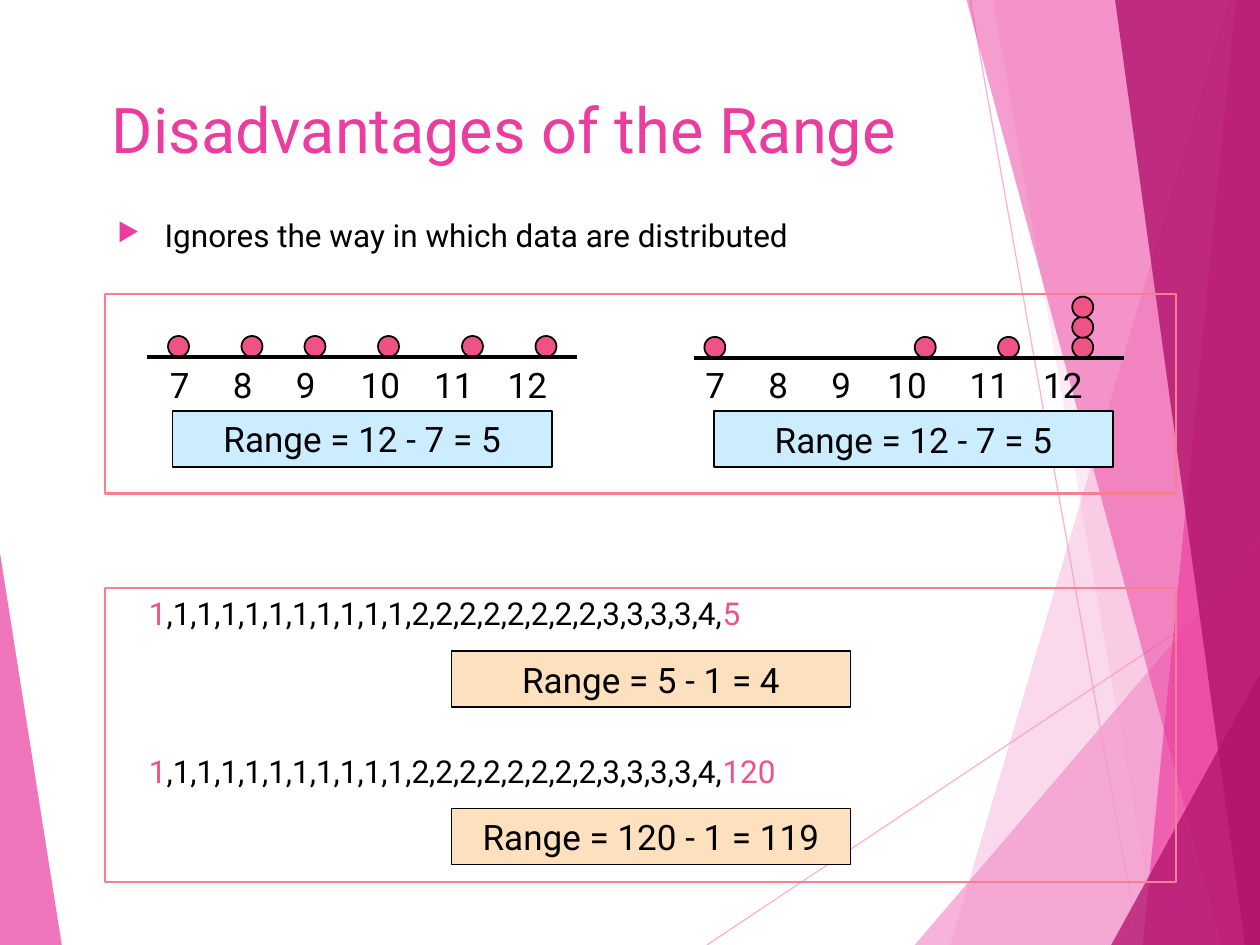
"""Build a slide on the disadvantages of the range."""
from lxml.etree import SubElement
from pptx import Presentation
from pptx.dml.color import RGBColor
from pptx.enum.shapes import MSO_CONNECTOR, MSO_SHAPE
from pptx.enum.text import MSO_ANCHOR, PP_ALIGN
from pptx.oxml.ns import qn
from pptx.util import Pt

FONT = "Roboto"
BLACK, PINK, LIGHT_PINK, DARK_PINK = "000000", "EB3D9F", "F496CB", "B2136D"
DOT_COLOR, FRAME_COLOR, BLUE, ORANGE = "EF5285", "F77F90", "CCECFF", "FDE0BD"
WIDTH, HEIGHT, DOT = 720, 540, 12

TITLE = "Disadvantages of the Range"
BULLET = "Ignores the way in which data are distributed"
RAYS = [((404, 540), (720, 329.5)), ((554.4, 0), (650.9, 540))]
FACETS = [
    (LIGHT_PINK, 36, [(702, 0), (543, 540), (720, 540), (720, 0)]),
    (LIGHT_PINK, 20, [(567.5, 0), (661.5, 540), (720, 540), (720, 0)]),
    (LIGHT_PINK, 72, [(522.7, 540), (720, 309), (720, 540)]),
    (PINK, 50, [(552.3, 0), (698.4, 540), (720, 540), (720, 0)]),
    (PINK, 66, [(706.3, 0), (653, 540), (720, 540), (720, 0)]),
    (DARK_PINK, 80, [(637.2, 0), (711.4, 540), (720, 540), (720, 0)]),
    (DARK_PINK, 76, [(635, 540), (720, 385), (720, 540)]),
    (PINK, 70, [(0, 316), (35.3, 540), (0, 540)]),
]
DOT_PLOTS = [
    {"axis": (84, 330, 204), "labels": (90, 258), "tabs": [36, 72, 109, 151, 193],
     "dots": [(96, 1), (138, 1), (174, 1), (216, 1), (264, 1), (306, 1)]},
    {"axis": (396.7, 642.2, 204.5), "labels": (396, 270), "tabs": [36, 72, 104, 151, 193],
     "dots": [(402.5, 1), (522.7, 1), (570.3, 1), (612.7, 3)]},
]
AXIS_VALUES = ["7", "8", "9", "10", "11", "12"]
RANGES = [
    ("Range = 12 - 7 = 5", 98.5, 234.7, 217, BLUE),
    ("Range = 12 - 7 = 5", 408, 235, 228, BLUE),
    ("Range = 5 - 1 = 4", 258, 372, 228, ORANGE),
    ("Range = 120 - 1 = 119", 258, 462, 228, ORANGE),
]
MIDDLE_VALUES = ["1"] * 10 + ["2"] * 8 + ["3"] * 4 + ["4"]
SEQUENCES = [("5", 336), ("120", 426)]
FRAMES = [(60, 168, 612, 114), (60, 336, 612, 168)]


def rgb(color):
    return RGBColor.from_string(color)


def set_alpha(fill_format_element, percent):
    color = next(fill_format_element.iter(qn("a:srgbClr")))
    SubElement(color, qn("a:alpha")).set("val", str(percent * 1000))


def add_line(slide, start, end, color, weight):
    points = [Pt(value) for value in (*start, *end)]
    line = slide.shapes.add_connector(MSO_CONNECTOR.STRAIGHT, *points)
    line.line.color.rgb = rgb(color)
    line.line.width = Pt(weight)
    SubElement(line._element.spPr, qn("a:effectLst"))
    return line


def add_facet(slide, color, opacity, corners):
    first, *others = [(Pt(x), Pt(y)) for x, y in corners]
    builder = slide.shapes.build_freeform(*first, scale=1.0)
    builder.add_line_segments(others, close=True)
    facet = builder.convert_to_shape()
    facet.shadow.inherit = False
    facet.fill.solid()
    facet.fill.fore_color.rgb = rgb(color)
    facet.line.fill.background()
    set_alpha(facet._element.spPr, opacity)


def add_shape(slide, kind, box, fill, outline, weight=1):
    shape = slide.shapes.add_shape(kind, *map(Pt, box))
    shape.shadow.inherit = False
    if fill:
        shape.fill.solid()
        shape.fill.fore_color.rgb = rgb(fill)
    else:
        shape.fill.background()
    shape.line.color.rgb = rgb(outline)
    shape.line.width = Pt(weight)
    return shape


def style_run(run, size, color):
    run.font.name = FONT
    run.font.size = Pt(size)
    run.font.color.rgb = rgb(color)


def add_text(slide, box, parts, size):
    text_box = slide.shapes.add_textbox(*map(Pt, box))
    text_box.text_frame.word_wrap = True
    paragraph = text_box.text_frame.paragraphs[0]
    for text, color in parts:
        run = paragraph.add_run()
        run.text = text
        style_run(run, size, color)
    return text_box


def add_bullet(paragraph):
    properties = paragraph._p.get_or_add_pPr()
    properties.set("marL", str(Pt(27)))
    properties.set("indent", str(-Pt(27)))
    bullet_color = SubElement(properties, qn("a:buClr"))
    SubElement(bullet_color, qn("a:srgbClr")).set("val", PINK)
    SubElement(properties, qn("a:buSzPct")).set("val", "80000")
    SubElement(properties, qn("a:buChar")).set("char", "▶")


def add_tabs(paragraph, positions):
    tabs = SubElement(paragraph._p.get_or_add_pPr(), qn("a:tabLst"))
    for position in positions:
        tab = SubElement(tabs, qn("a:tab"))
        tab.set("pos", str(Pt(position)))
        tab.set("algn", "l")


def add_dot_plot(slide, plot):
    start, end, axis_y = plot["axis"]
    for left, count in plot["dots"]:
        for level in range(count):
            top = axis_y - DOT - level * 11.5
            add_shape(slide, MSO_SHAPE.OVAL, (left, top, DOT, DOT), DOT_COLOR, BLACK)
    add_line(slide, (start, axis_y), (end, axis_y), BLACK, 2.25)
    left, width = plot["labels"]
    labels = add_text(slide, (left, 204, width, 31), [("\t".join(AXIS_VALUES), BLACK)], 20)
    add_tabs(labels.text_frame.paragraphs[0], plot["tabs"])


def add_range(slide, text, left, top, width, fill):
    shape = add_shape(slide, MSO_SHAPE.RECTANGLE, (left, top, width, 32), fill, BLACK)
    shape.text_frame.text = text
    shape.text_frame.vertical_anchor = MSO_ANCHOR.MIDDLE
    paragraph = shape.text_frame.paragraphs[0]
    paragraph.alignment = PP_ALIGN.CENTER
    style_run(paragraph.runs[0], 20, BLACK)


def main():
    presentation = Presentation()
    presentation.slide_width, presentation.slide_height = Pt(WIDTH), Pt(HEIGHT)
    slide = presentation.slides.add_slide(presentation.slide_layouts[6])
    for start, end in RAYS:
        ray = add_line(slide, start, end, LIGHT_PINK, 0.75)
        set_alpha(ray._element.spPr, 70)
    for facet in FACETS:
        add_facet(slide, *facet)

    title = add_text(slide, (48, 48, 500, 104), [(TITLE, PINK)], 36)
    title.text_frame.margin_left = Pt(16)
    body = add_text(slide, (60, 120, 636, 40), [(BULLET, BLACK)], 18)
    add_bullet(body.text_frame.paragraphs[0])

    for plot in DOT_PLOTS:
        add_dot_plot(slide, plot)
    for last, top in SEQUENCES:
        middle = "," + ",".join(MIDDLE_VALUES) + ","
        parts = [("1", DOT_COLOR), (middle, BLACK), (last, DOT_COLOR)]
        add_text(slide, (78, top, 594, 36), parts, 18)
    for values in RANGES:
        add_range(slide, *values)
    for frame in FRAMES:
        add_shape(slide, MSO_SHAPE.RECTANGLE, frame, None, FRAME_COLOR, 1.5)
    presentation.save("out.pptx")


if __name__ == "__main__":
    main()
